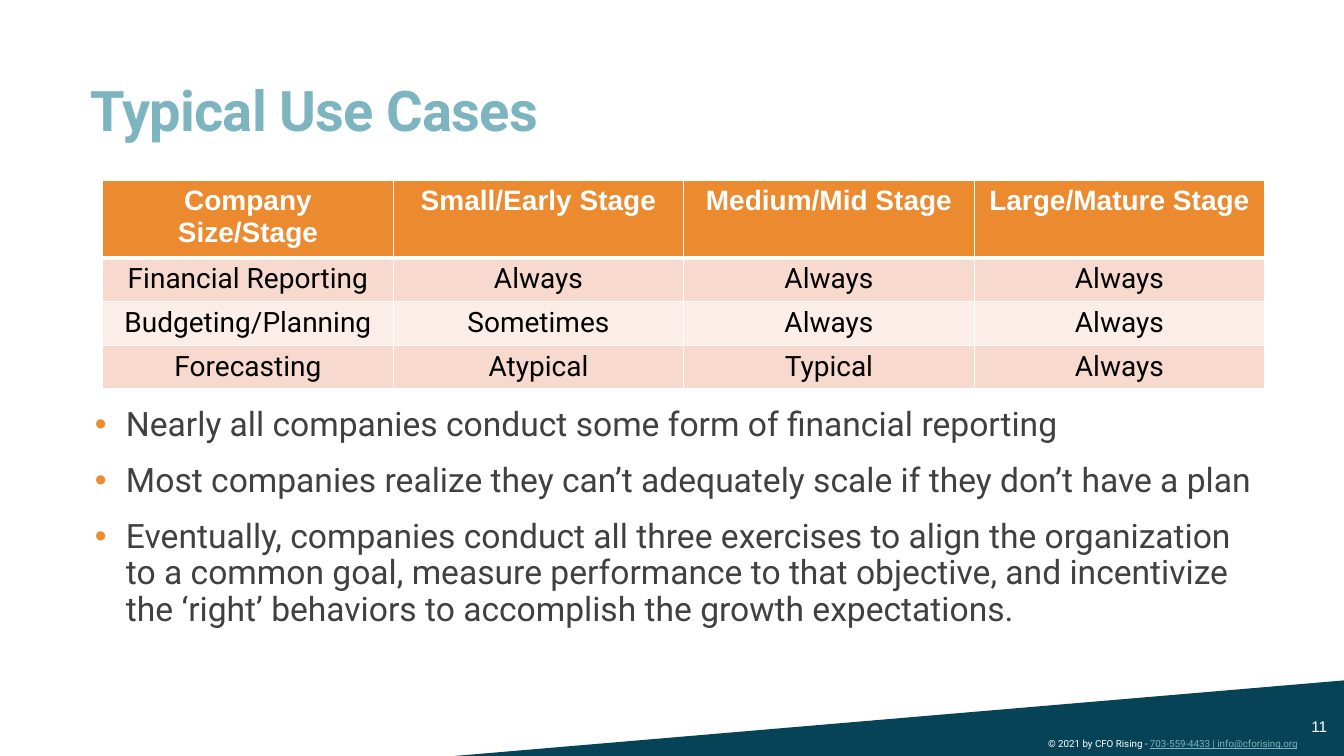
from lxml import etree
from pptx import Presentation
from pptx.dml.color import RGBColor
from pptx.enum.shapes import MSO_SHAPE
from pptx.enum.text import MSO_ANCHOR, PP_ALIGN
from pptx.oxml.ns import qn
from pptx.util import Pt

CENTER = PP_ALIGN.CENTER
TOP, MIDDLE, BOTTOM = MSO_ANCHOR.TOP, MSO_ANCHOR.MIDDLE, MSO_ANCHOR.BOTTOM
RIGHT_TRIANGLE = MSO_SHAPE.RIGHT_TRIANGLE

COLORS = {
    "white": "FFFFFF", "black": "000000", "gray": "404040", "teal": "7CB4C0",
    "navy": "074356", "orange": "EB8A2F", "band_dark": "F7DACD", "band_light": "FBEDE8",
}
FORMATS = {
    "title": {"size": Pt(40), "name": "Roboto", "bold": True, "color": "teal"},
    "header": {"size": Pt(20), "name": "Arial", "bold": True, "color": "white"},
    "cell": {"size": Pt(20), "name": "Roboto", "bold": False, "color": "black"},
    "bullet": {"size": Pt(24), "name": "Roboto", "color": "gray"},
    "copyright": {"size": Pt(7), "name": "Roboto", "color": "white"},
    "contact": {"size": Pt(7), "name": "Roboto", "underline": True, "color": "teal"},
    "number": {"size": Pt(11), "name": "Arial", "color": "white"},
}
USE_CASES = [
    ["Company Size/Stage", "Small/Early Stage", "Medium/Mid Stage", "Large/Mature Stage"],
    ["Financial Reporting", "Always", "Always", "Always"],
    ["Budgeting/Planning", "Sometimes", "Always", "Always"],
    ["Forecasting", "Atypical", "Typical", "Always"],
]
BULLETS = [
    "Nearly all companies conduct some form of financial reporting",
    "Most companies realize they can’t adequately scale if they don’t have a plan",
    "Eventually, companies conduct all three exercises to align the organization to a "
    "common goal, measure performance to that objective, and incentivize the ‘right’ "
    "behaviors to accomplish the growth expectations.",
]


def rgb(color):
    return RGBColor.from_string(COLORS[color])


def add_run(paragraph, text, style):
    run = paragraph.add_run()
    run.text = text
    for name, value in FORMATS[style].items():
        if name == "color":
            run.font.color.rgb = rgb(value)
        else:
            setattr(run.font, name, value)
    return run


def add_text_frame(slide, box, anchor=TOP, wrap=True):
    frame = slide.shapes.add_textbox(*map(Pt, box)).text_frame
    frame.word_wrap = wrap
    frame.vertical_anchor = anchor
    return frame


def add_title(slide, box, text):
    paragraph = add_text_frame(slide, box, BOTTOM).paragraphs[0]
    paragraph.line_spacing = 0.85
    run = add_run(paragraph, text, "title")
    run.font._element.set("spc", "-50")


def set_borders(cell, widths):
    properties = cell._tc.get_or_add_tcPr()
    for position, (side, width) in enumerate(widths.items()):
        line = etree.Element(qn(f"a:{side}"), w=str(Pt(width)))
        fill = etree.SubElement(line, qn("a:solidFill"))
        etree.SubElement(fill, qn("a:srgbClr"), val=COLORS["white"])
        properties.insert(position, line)


def add_use_case_table(slide, box, rows):
    table = slide.shapes.add_table(len(rows), len(rows[0]), *map(Pt, box)).table
    table.horz_banding = False
    for row_index, row in enumerate(rows):
        is_header = row_index == 0
        band = "band_dark" if row_index % 2 else "band_light"
        for column_index, text in enumerate(row):
            cell = table.cell(row_index, column_index)
            cell.fill.solid()
            cell.fill.fore_color.rgb = rgb("orange" if is_header else band)
            set_borders(cell, {"lnL": 1, "lnR": 1, "lnT": 3 if row_index == 1 else 1,
                               "lnB": 3 if is_header else 1})
            paragraph = cell.text_frame.paragraphs[0]
            paragraph.alignment = CENTER
            add_run(paragraph, text, "header" if is_header else "cell")


def add_bullets(slide, box, items):
    frame = add_text_frame(slide, box)
    frame.margin_left = frame.margin_right = 0
    for index, text in enumerate(items):
        paragraph = frame.add_paragraph() if index else frame.paragraphs[0]
        paragraph.line_spacing = 0.9
        paragraph.space_before = Pt(2 if index else 0)
        paragraph.space_after = Pt(12)
        properties = paragraph._p.get_or_add_pPr()
        properties.set("marL", str(Pt(52.6)))
        properties.set("indent", str(Pt(-22.3)))
        bullet_color = etree.SubElement(properties, qn("a:buClr"))
        etree.SubElement(bullet_color, qn("a:srgbClr"), val=COLORS["orange"])
        etree.SubElement(properties, qn("a:buFont"), typeface="Arial")
        etree.SubElement(properties, qn("a:buChar"), char="•")
        add_run(paragraph, text, "bullet")


def add_footer(slide, box, number):
    left, top, width, height = box

    # Sloping band
    band = slide.shapes.add_shape(RIGHT_TRIANGLE, *map(Pt, box))
    band.shadow.inherit = False
    band.fill.solid()
    band.fill.fore_color.rgb = rgb("navy")
    band.line.fill.background()
    band._element.spPr.get_or_add_xfrm().set("flipH", "1")

    # Copyright line
    copyright_box = (left + width - 218.4, top + 37.4, 209, 16)
    paragraph = add_text_frame(slide, copyright_box, wrap=False).paragraphs[0]
    add_run(paragraph, "© 2021 by CFO Rising - ", "copyright")
    add_run(paragraph, "703-559-4433 | info@cforising.org", "contact")

    # Slide number
    number_box = (left + width - 30.4, top + 18.7, 30, 28.8)
    frame = add_text_frame(slide, number_box, MIDDLE, wrap=False)
    add_run(frame.paragraphs[0], number, "number")


def main():
    presentation = Presentation()
    presentation.slide_width, presentation.slide_height = Pt(960), Pt(540)
    slide = presentation.slides.add_slide(presentation.slide_layouts[6])
    add_footer(slide, (324.5, 486, 635.5, 54), "11")
    add_title(slide, (57.6, 40.3, 802.8, 65.5), "Typical Use Cases")
    add_use_case_table(slide, (73.4, 128.9, 830, 118), USE_CASES)
    add_bullets(slide, (37.4, 287.8, 862.6, 198), BULLETS)
    presentation.save("out.pptx")


if __name__ == "__main__":
    main()
